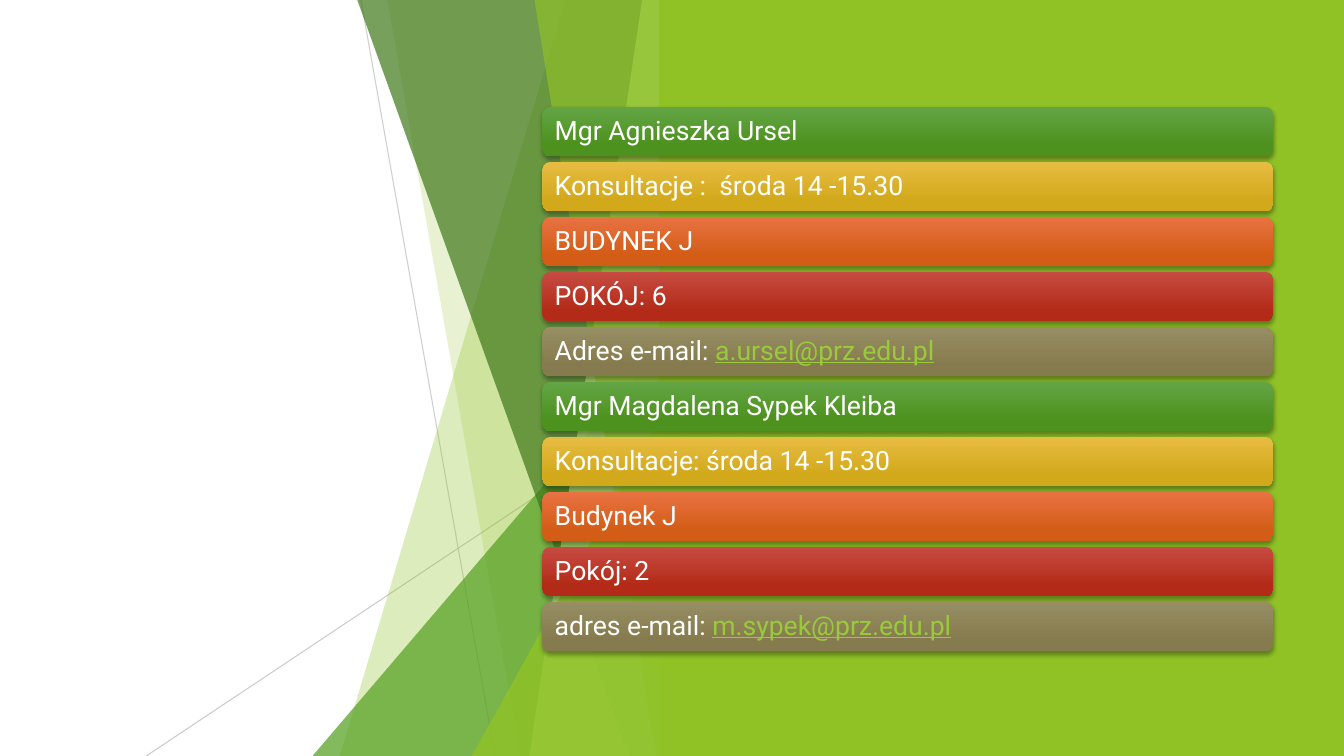
from lxml import etree
from pptx import Presentation
from pptx.dml.color import RGBColor as RGB
from pptx.enum.shapes import MSO_CONNECTOR as CONN, MSO_SHAPE as SHAPE
from pptx.enum.text import MSO_ANCHOR as ANCHOR, PP_ALIGN as ALIGN
from pptx.oxml.ns import qn
from pptx.util import Inches, Pt

COLORS = {
    "white": "FFFFFF", "lime": "90C226", "green": "54A021", "forest": "3F7819",
    "pale": "C0E474", "hairline": "BFBFBF", "link": "99CA3C", "shadow": "000000",
}
# Bar gradients, top and bottom colour, used in turn
BAR_GRADIENTS = [
    ("63A545", "4D921E"), ("E7BC43", "D2A91B"), ("E87242", "D35D16"),
    ("C74B42", "B32B18"), ("988E64", "857B4E"),
]
# Each entry: plain text, e-mail address
CONTACTS = [
    ("Mgr Agnieszka Ursel", ""),
    ("Konsultacje :  środa 14 -15.30", ""),
    ("BUDYNEK J", ""),
    ("POKÓJ: 6", ""),
    ("Adres e-mail: ", "a.ursel@prz.edu.pl"),
    ("Mgr Magdalena Sypek Kleiba", ""),
    ("Konsultacje: środa 14 -15.30", ""),
    ("Budynek J", ""),
    ("Pokój: 2", ""),
    ("adres e-mail: ", "m.sypek@prz.edu.pl"),
]
# Thin lines: start, end, opacity
HAIRLINES = [((3.58, 0), (4.91, 7.5), 75), ((6.66, 4.03), (1.45, 7.5), 80)]
# Facets reach the same right edge: kind, left edge, colour, opacity
# slant: x at top and x at bottom; triangle: left and top
FACETS = [
    ("slant", (5.61, 3.37), "lime", 30),
    ("slant", (3.84, 5.16), "lime", 20),
    ("triangle", (3.1, 3.33), "green", 72),
    ("slant", (3.54, 6.24), "forest", 70),
    ("slant", (6.37, 5.25), "pale", 70),
    ("slant", (5.3, 6.51), "lime", 65),
    ("triangle", (4.68, 3.93), "lime", 80),
]
SLIDE_W, SLIDE_H = 13.33, 7.5
FACET_RIGHT, FACET_TOP = 6.66, -0.01
PANEL_LEFT = 6.54
BAR_LEFT, BAR_TOP, BAR_W, BAR_H, BAR_PITCH = 5.38, 1.06, 7.25, 0.49, 0.5456

prs = Presentation()
prs.slide_width, prs.slide_height = Inches(SLIDE_W), Inches(SLIDE_H)
slide = prs.slides.add_slide(prs.slide_layouts[6])
shapes = slide.shapes


def set_alpha(color_parent, percent):
    color = next(color_parent.iter(qn("a:srgbClr")))
    etree.SubElement(color, qn("a:alpha")).set("val", str(percent * 1000))


def add_plain(kind, left, top, width, height):
    shape = shapes.add_shape(kind, *map(Inches, (left, top, width, height)))
    shape.shadow.inherit = False
    shape.line.fill.background()
    return shape


def paint(shape, color, opacity=100):
    shape.fill.solid()
    shape.fill.fore_color.rgb = RGB.from_string(COLORS[color])
    if opacity < 100:
        set_alpha(shape.fill._xPr.find(qn("a:solidFill")), opacity)


def add_text(paragraph, text, *, color="white", size=19, font="Roboto", underline=False):
    run = paragraph.add_run()
    run.text = text
    run.font.name, run.font.size = font, Pt(size)
    run.font.color.rgb = RGB.from_string(COLORS[color])
    run.font.underline = underline


def add_hairline(start, end, opacity):
    line = shapes.add_connector(CONN.STRAIGHT, *map(Inches, start + end))
    line.line.width = Pt(0.75)
    line.line.color.rgb = RGB.from_string(COLORS["hairline"])
    properties = line._element.spPr
    set_alpha(properties, opacity)
    etree.SubElement(properties, qn("a:effectLst"))


def add_facet(kind, edge, color, opacity):
    if kind == "triangle":
        left, top = edge
        facet = add_plain(SHAPE.ISOSCELES_TRIANGLE, left, top, FACET_RIGHT - left, SLIDE_H - top)
        facet.adjustments[0] = 1
    else:
        x_top, x_bottom = edge
        corners = [(x_top, FACET_TOP), (FACET_RIGHT, FACET_TOP),
                   (FACET_RIGHT, SLIDE_H), (x_bottom, SLIDE_H)]
        start, *others = [(Inches(x), Inches(y)) for x, y in corners]
        outline = shapes.build_freeform(*start)
        outline.add_line_segments(others)
        facet = outline.convert_to_shape()
        facet.shadow.inherit = False
        facet.line.fill.background()
    paint(facet, color, opacity)


def add_bar(row, label, email):
    bar = add_plain(SHAPE.ROUNDED_RECTANGLE, BAR_LEFT, BAR_TOP + row * BAR_PITCH, BAR_W, BAR_H)
    # Gradient from top to bottom
    bar.fill.gradient()
    bar.fill.gradient_angle = 270
    gradient = BAR_GRADIENTS[row % len(BAR_GRADIENTS)]
    for stop, color, position in zip(bar.fill.gradient_stops, gradient, (0, 0.78)):
        stop.color.rgb = RGB.from_string(color)
        stop.position = position
    # Soft shadow below
    effects = bar._element.spPr.find(qn("a:effectLst"))
    shadow = etree.SubElement(effects, qn("a:outerShdw"), blurRad=str(Pt(3)),
                              dist=str(Pt(2)), dir="5400000", rotWithShape="0")
    etree.SubElement(shadow, qn("a:srgbClr"), val=COLORS["shadow"])
    set_alpha(shadow, 35)
    # Label and address
    frame = bar.text_frame
    frame.word_wrap = True
    frame.vertical_anchor = ANCHOR.MIDDLE
    frame.margin_left = frame.margin_right = Inches(0.1)
    frame.margin_top = frame.margin_bottom = Inches(0.08)
    paragraph = frame.paragraphs[0]
    paragraph.alignment = ALIGN.LEFT
    paragraph.line_spacing = 0.9
    add_text(paragraph, label)
    if email:
        add_text(paragraph, email, color="link", underline=True)


# Backdrop with slanted facets
paint(add_plain(SHAPE.RECTANGLE, 0, 0, SLIDE_W, SLIDE_H), "white")
for hairline in HAIRLINES:
    add_hairline(*hairline)
for facet_data in FACETS:
    add_facet(*facet_data)

# Green panel
paint(add_plain(SHAPE.RECTANGLE, PANEL_LEFT, 0, SLIDE_W - PANEL_LEFT, SLIDE_H), "lime")

# Contact bars
for row, (label, email) in enumerate(CONTACTS):
    add_bar(row, label, email)

prs.save("out.pptx")
